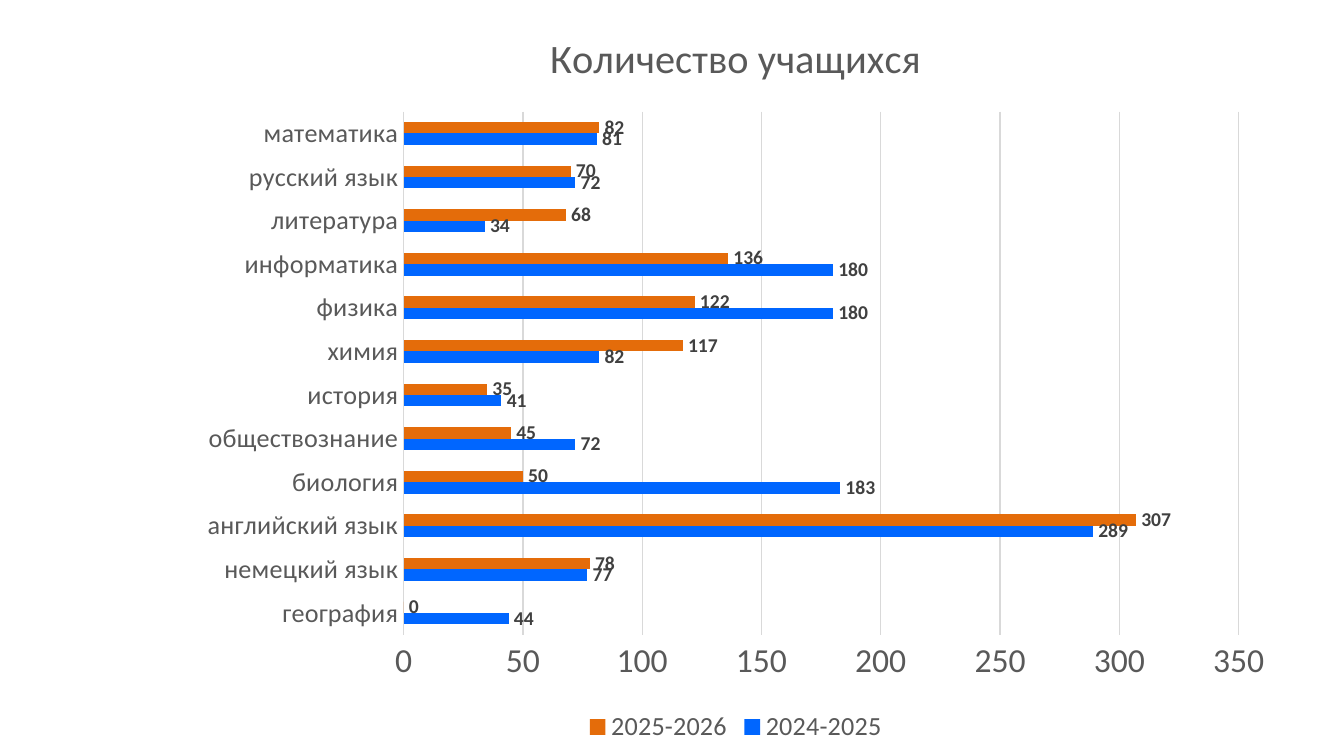
"""Build a slide comparing pupil numbers by subject over two school years."""
from pptx import Presentation
from pptx.chart.data import CategoryChartData
from pptx.dml.color import RGBColor
from pptx.enum.chart import XL_CHART_TYPE, XL_LABEL_POSITION, XL_LEGEND_POSITION, XL_TICK_MARK
from pptx.util import Pt

BAR_CLUSTERED = XL_CHART_TYPE.BAR_CLUSTERED
OUTSIDE_END = XL_LABEL_POSITION.OUTSIDE_END
LEGEND_BOTTOM = XL_LEGEND_POSITION.BOTTOM
NO_TICK = XL_TICK_MARK.NONE
BLANK_LAYOUT = 6

COLORS = {
    "text": "595959",
    "label": "404040",
    "grid": "D9D9D9",
    "2024-2025": "0066FF",
    "2025-2026": "E46C0A",
}

SUBJECTS = [
    ("география", 44, 0),
    ("немецкий язык", 77, 78),
    ("английский язык", 289, 307),
    ("биология", 183, 50),
    ("обществознание", 72, 45),
    ("история", 41, 35),
    ("химия", 82, 117),
    ("физика", 180, 122),
    ("информатика", 180, 136),
    ("литература", 34, 68),
    ("русский язык", 72, 70),
    ("математика", 81, 82),
]


class SlideBuilder:
    def __init__(self, slide, font_name, colors):
        self.slide = slide
        self.font_name = font_name
        self.colors = colors

    def color(self, name):
        return RGBColor.from_string(self.colors[name])

    def font(self, font, size, color="text", bold=False):
        values = {"name": self.font_name, "size": Pt(size), "bold": bold}
        for attribute, value in values.items():
            setattr(font, attribute, value)
        font.color.rgb = self.color(color)

    def line(self, line, color):
        line.width = Pt(0.75)
        line.color.rgb = self.color(color)

    def axis(self, axis, size):
        axis.major_tick_mark = NO_TICK
        axis.minor_tick_mark = NO_TICK
        self.font(axis.tick_labels.font, size)

    def series(self, series):
        series.format.fill.solid()
        series.format.fill.fore_color.rgb = self.color(series.name)
        series.invert_if_negative = False
        labels = series.data_labels
        labels.show_value = True
        labels.position = OUTSIDE_END
        self.font(labels.font, 10.5, "label", True)

    def title(self, chart, text):
        chart.has_title = True
        frame = chart.chart_title.text_frame
        frame.text = text
        self.font(frame.paragraphs[0].runs[0].font, 21.6)
        chart.chart_title.include_in_layout = False

    def legend(self, chart):
        chart.has_legend = True
        chart.legend.position = LEGEND_BOTTOM
        chart.legend.include_in_layout = False
        self.font(chart.legend.font, 14)

    def bar_chart(self, title, rows, names, left, top, width, height):
        categories, *columns = zip(*rows)
        data = CategoryChartData()
        data.categories = categories
        for name, values in zip(names, columns):
            data.add_series(name, values)
        chart = self.slide.shapes.add_chart(
            BAR_CLUSTERED, Pt(left), Pt(top), Pt(width), Pt(height), data
        ).chart
        self.font(chart.font, 18)
        self.title(chart, title)
        self.legend(chart)
        self.axis(chart.category_axis, 14)
        self.line(chart.category_axis.format.line, "grid")
        self.axis(chart.value_axis, 18)
        chart.value_axis.format.line.fill.background()
        chart.value_axis.has_major_gridlines = True
        self.line(chart.value_axis.major_gridlines.format.line, "grid")
        plot = chart.plots[0]
        plot.gap_width = 182
        plot.vary_by_categories = False
        for series in plot.series:
            self.series(series)


def main():
    presentation = Presentation()
    presentation.slide_width = Pt(720)
    presentation.slide_height = Pt(405)
    slide = presentation.slides.add_slide(presentation.slide_layouts[BLANK_LAYOUT])
    builder = SlideBuilder(slide, "Calibri", COLORS)
    builder.bar_chart(
        "Количество учащихся", SUBJECTS, ("2024-2025", "2025-2026"), 99.4, 0, 589.7, 401
    )
    presentation.save("out.pptx")


if __name__ == "__main__":
    main()
